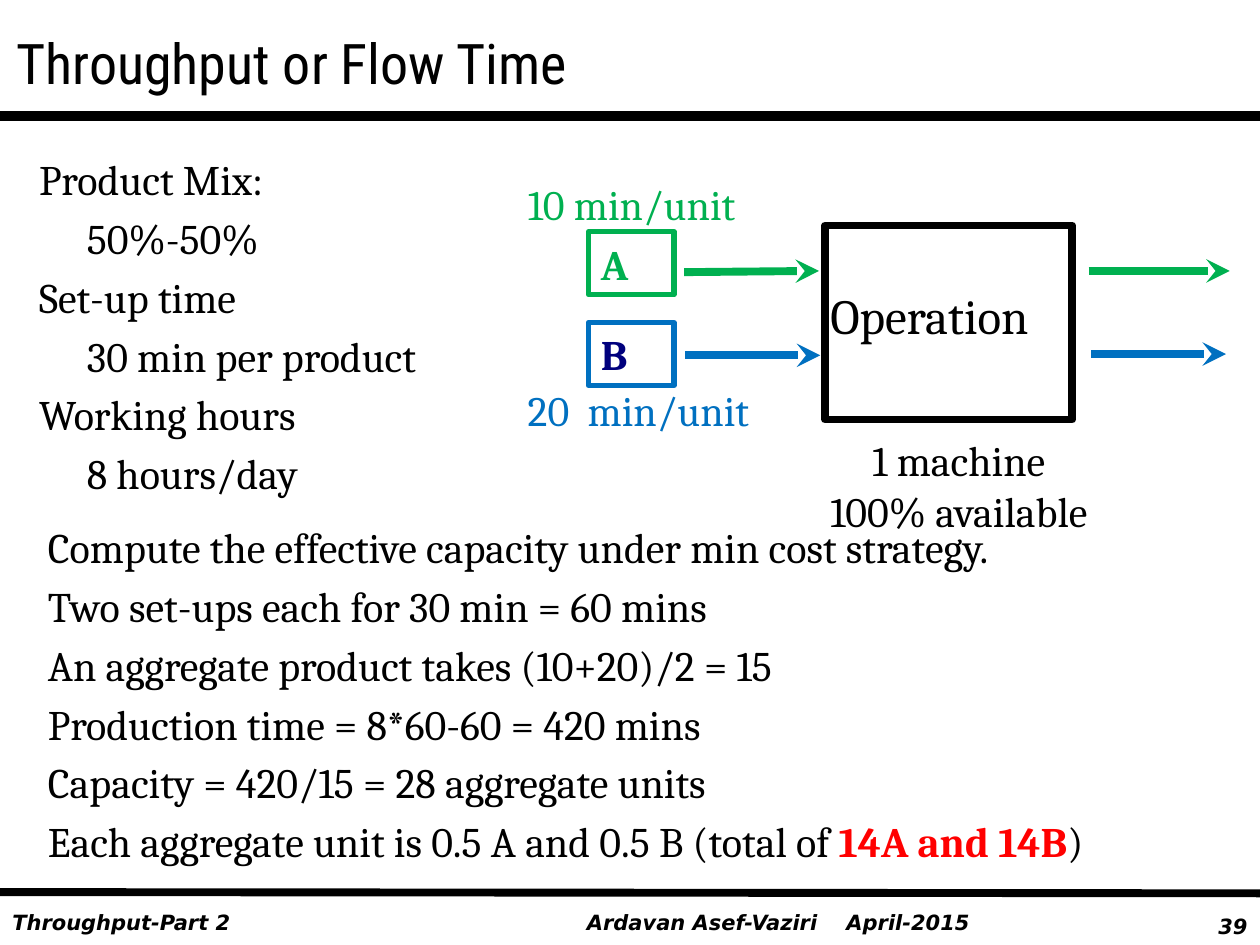
from lxml import etree
from pptx import Presentation
from pptx.dml.color import RGBColor
from pptx.enum.shapes import MSO_CONNECTOR, MSO_SHAPE
from pptx.enum.text import MSO_ANCHOR as Anchor, MSO_AUTO_SIZE as AutoSize, PP_ALIGN as Align
from pptx.oxml.ns import qn
from pptx.util import Inches, Pt

BLACK = RGBColor(0x00, 0x00, 0x00)
GREEN = RGBColor(0x00, 0xB0, 0x50)
BLUE = RGBColor(0x00, 0x70, 0xC0)
NAVY = RGBColor(0x00, 0x00, 0x7D)
RED = RGBColor(0xFF, 0x00, 0x00)

BODY_FONT = "Cambria"
TITLE_FONT = "Roboto Condensed"
FOOTER_FONT = "DejaVu Sans"

HANGING = 0.38

# Each item is (indented, runs); each run is (text, colour, bold)
GIVENS = [
    (False, [("Product Mix:", BLACK, False)]),
    (True, [("50%-50%", BLACK, False)]),
    (False, [("Set-up time", BLACK, False)]),
    (True, [("30 min per product", BLACK, False)]),
    (False, [("Working hours", BLACK, False)]),
    (True, [("8 hours/day", BLACK, False)]),
]
SOLUTION = [
    (False, [("Compute the effective capacity under min cost strategy.", BLACK, False)]),
    (False, [("Two set-ups each for 30 min = 60 mins", BLACK, False)]),
    (False, [("An aggregate product takes (10+20)/2 = 15", BLACK, False)]),
    (False, [("Production time = 8*60-60 = 420 mins", BLACK, False)]),
    (False, [("Capacity = 420/15 = 28 aggregate units", BLACK, False)]),
    (False, [("Each aggregate unit is 0.5 A and 0.5 B (total of ", BLACK, False),
             ("14A and 14B", RED, True),
             (")", BLACK, False)]),
]


def add_run(paragraph, text, size=24, font=BODY_FONT, color=BLACK, bold=False, italic=False):
    run = paragraph.add_run()
    run.text = text
    run.font.size = Pt(size)
    run.font.name = font
    run.font.color.rgb = color
    run.font.bold = bold
    run.font.italic = italic


def place(shape, left, top, width, height):
    shape.left, shape.top = Inches(left), Inches(top)
    shape.width, shape.height = Inches(width), Inches(height)


def add_label(slide, box, lines, align=Align.LEFT, margin=None, wrap=True, **style):
    label = slide.shapes.add_textbox(*map(Inches, box))
    frame = label.text_frame
    frame.word_wrap = wrap
    if margin is not None:
        frame.margin_left = frame.margin_right = Inches(margin)
        frame.margin_top = frame.margin_bottom = Inches(margin)
    for number, line in enumerate(lines):
        paragraph = frame.add_paragraph() if number else frame.paragraphs[0]
        paragraph.alignment = align
        add_run(paragraph, line, **style)
    return label


def add_tab_stop(paragraph, position):
    properties = paragraph._p.get_or_add_pPr()
    stops = etree.SubElement(properties, qn("a:tabLst"))
    etree.SubElement(stops, qn("a:tab"), pos=str(Inches(position)), algn="l")


def add_line(slide, start, end, color, width, arrow=False):
    line = slide.shapes.add_connector(MSO_CONNECTOR.STRAIGHT, *map(Inches, start + end))
    line.line.color.rgb = color
    line.line.width = Pt(width)
    if arrow:
        etree.SubElement(line.line._get_or_add_ln(), qn("a:tailEnd"), type="stealth")
    etree.SubElement(line._element.spPr, qn("a:effectLst"))


def add_box(slide, box, color, width):
    outline = slide.shapes.add_shape(MSO_SHAPE.RECTANGLE, *map(Inches, box))
    outline.shadow.inherit = False
    outline.fill.background()
    outline.line.color.rgb = color
    outline.line.width = Pt(width)
    return outline


def add_product(slide, top, name, color, name_color):
    product = add_box(slide, (4.67, top, 0.68, 0.5), color, 3)
    product.text_frame.vertical_anchor = Anchor.TOP
    paragraph = product.text_frame.paragraphs[0]
    paragraph.alignment = Align.LEFT
    add_run(paragraph, name, color=name_color, bold=True)


def fill_list(body, box, items):
    place(body, *box)
    frame = body.text_frame
    frame.auto_size = AutoSize.NONE
    for number, (indented, runs) in enumerate(items):
        paragraph = frame.add_paragraph() if number else frame.paragraphs[0]
        paragraph.space_before = Pt(4.8)
        properties = paragraph._p.get_or_add_pPr()
        properties.set("marL", str(Inches(HANGING)))
        properties.set("indent", str(0 if indented else -Inches(HANGING)))
        etree.SubElement(properties, qn("a:buNone"))
        for text, color, bold in runs:
            add_run(paragraph, text, color=color, bold=bold)


def add_title(slide):
    title = slide.shapes.title
    place(title, 0.03, 0.03, 9.97, 0.92)
    title.text_frame.vertical_anchor = Anchor.MIDDLE
    paragraph = title.text_frame.paragraphs[0]
    paragraph.alignment = Align.LEFT
    add_run(paragraph, "Throughput or Flow Time", size=32, font=TITLE_FONT)


def add_footer(slide):
    style = dict(size=12, font=FOOTER_FONT, bold=True, italic=True)
    add_label(slide, (0, 7.17, 4.67, 0.3), ["Throughput-Part 2"], **style)
    author = add_label(slide, (4.56, 7.17, 3.35, 0.3),
                       ["Ardavan Asef-Vaziri\tApril-2015"], **style)
    add_tab_stop(author.text_frame.paragraphs[0], 2.06)
    add_label(slide, (9.25, 7.2, 0.75, 0.3), ["39"], align=Align.RIGHT, **style)


def add_process(slide):
    # Products with their unit times
    add_product(slide, 1.84, "A", GREEN, GREEN)
    add_product(slide, 2.56, "B", BLUE, NAVY)
    add_label(slide, (4.09, 1.37, 2.01, 0.5), ["10 min/unit"], color=GREEN)
    add_label(slide, (4.09, 3, 2.4, 0.5), ["20  min/unit"], color=BLUE)

    # Operation
    add_label(slide, (6.59, 2.27, 1.87, 0.47), ["Operation"], margin=0, wrap=False, size=28)
    add_box(slide, (6.55, 1.79, 1.96, 1.54), BLACK, 4.5)
    add_label(slide, (6.3, 3.4, 2.62, 0.91), ["1 machine", "100% available"], align=Align.CENTER)

    # Flows into and out of the operation
    for start, end, color in [
        ((5.43, 2.16), (6.5, 2.15), GREEN),
        ((8.64, 2.15), (9.76, 2.15), GREEN),
        ((5.44, 2.82), (6.51, 2.82), BLUE),
        ((8.66, 2.81), (9.73, 2.81), BLUE),
    ]:
        add_line(slide, start, end, color, 4.5, arrow=True)


def main():
    deck = Presentation()
    deck.slide_width, deck.slide_height = Inches(10), Inches(7.5)
    slide = deck.slides.add_slide(deck.slide_layouts.get_by_name("Two Content"))

    # Title and footer with their rules
    add_title(slide)
    add_line(slide, (0, 0.92), (10, 0.92), BLACK, 6)
    add_line(slide, (0, 7.08), (10, 7.09), BLACK, 4.5)
    add_footer(slide)

    # Problem data, process diagram and solution
    givens, solution = slide.placeholders[1], slide.placeholders[2]
    fill_list(givens, (0.21, 1.17, 4.23, 2.31), GIVENS)
    fill_list(solution, (0.28, 4.09, 9.72, 2.92), SOLUTION)
    add_process(slide)

    deck.save("out.pptx")


if __name__ == "__main__":
    main()
